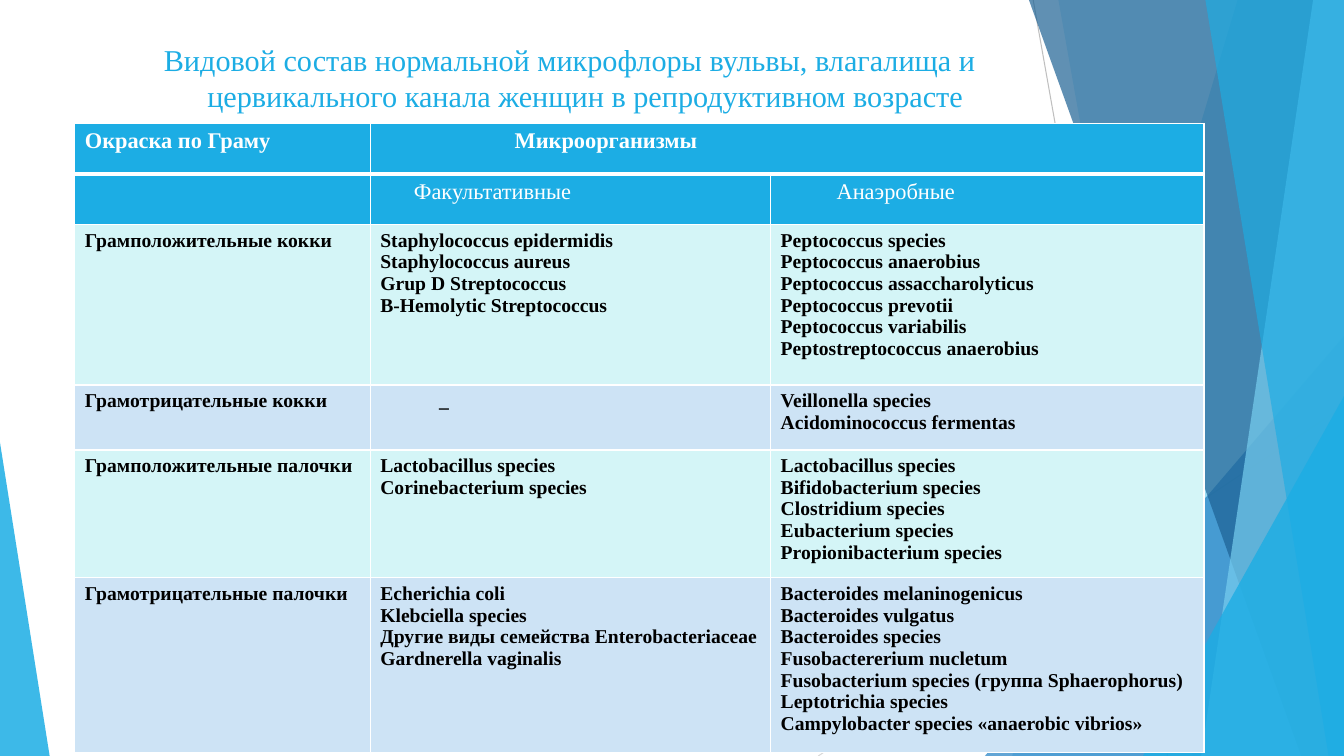
from lxml.etree import SubElement
from pptx import Presentation
from pptx.dml.color import RGBColor
from pptx.enum.shapes import MSO_CONNECTOR as Connector, MSO_SHAPE as Shape
from pptx.enum.text import MSO_ANCHOR as Anchor, PP_ALIGN as Align
from pptx.oxml import parse_xml
from pptx.oxml.ns import nsdecls, qn
from pptx.util import Pt

FONT = "Times New Roman"
COLORS = {
    "sky": "1CADE4", "blue": "2683C6", "navy": "1D6294", "pale": "77CEEF",
    "white": "FFFFFF", "black": "000000", "mint": "D4F5F7", "ice": "CDE3F5",
    "gray": "BFBFBF", "light_gray": "D9D9D9",
}
SLIDE_W, SLIDE_H = 960, 540

# Decoration, measured from the slide's top left corner
RAYS = [
    ((738, 0), (834, 540), "gray"),
    ((960, 290), (584.5, 540), "light_gray"),
]
# Facets reach the right edge: top x, bottom x, colour, opacity
BACK_FACETS = [(884, 723, "sky", 30), (756, 852, "sky", 20)]
FRONT_FACETS = [(735, 929.5, "navy", 70), (938, 858, "pale", 70), (861, 949, "sky", 65)]
# Corners stand on the bottom edge: left, top, width, apex, colour, opacity
BACK_CORNERS = [(703.5, 240, 256.5, 1, "blue", 72)]
FRONT_CORNERS = [(816.5, 283, 143.5, 1, "sky", 80), (0, 316, 35.5, 0, "sky", 85)]

TITLE = ["Видовой состав нормальной микрофлоры вульвы, влагалища и",
         "цервикального канала женщин в репродуктивном возрасте"]

COLUMN_WIDTHS = [211, 286, 309.5]
ROW_HEIGHTS = [36, 36, 114.5, 46.5, 85, 115.5]
SPECIES = [
    ("Грамположительные кокки",
     ["Staphylococcus epidermidis", "Staphylococcus aureus", "Grup D Streptococcus",
      "B-Hemolytic Streptococcus"],
     ["Peptococcus species", "Peptococcus anaerobius", "Peptococcus assaccharolyticus",
      "Peptococcus prevotii", "Peptococcus variabilis", "Peptostreptococcus anaerobius"]),
    ("Грамотрицательные кокки",
     ["_"],
     ["Veillonella species", "Acidominococcus fermentas"]),
    ("Грамположительные палочки",
     ["Lactobacillus species", "Corinebacterium species"],
     ["Lactobacillus species", "Bifidobacterium species", "Clostridium species",
      "Eubacterium species", "Propionibacterium species"]),
    ("Грамотрицательные палочки",
     ["Echerichia coli", "Klebciella species", "Другие виды семейства Enterobacteriaceae",
      "Gardnerella vaginalis"],
     ["Bacteroides melaninogenicus", "Bacteroides vulgatus", "Bacteroides species",
      "Fusobactererium nucletum", "Fusobacterium species (группа Sphaerophorus)",
      "Leptotrichia species", "Campylobacter species «anaerobic vibrios»"]),
]


def rgb(color):
    return RGBColor.from_string(COLORS[color])


def tint(shape, color, opacity):
    shape.shadow.inherit = False
    shape.line.fill.background()
    shape.fill.solid()
    shape.fill.fore_color.rgb = rgb(color)
    color_node = shape.fill._xPr.find(qn("a:solidFill"))[0]
    SubElement(color_node, qn("a:alpha"), val=str(opacity * 1000))


def indent(paragraph, margin, first_line=0):
    properties = paragraph._p.get_or_add_pPr()
    properties.set("marL", str(Pt(margin)))
    properties.set("indent", str(Pt(first_line)))


def add_run(paragraph, text, size, color, bold=False):
    run = paragraph.add_run()
    run.text = text
    run.font.name, run.font.size, run.font.bold = FONT, Pt(size), bold
    run.font.color.rgb = rgb(color)


def draw_rays(slide, left, top):
    for (x1, y1), (x2, y2), color in RAYS:
        ray = slide.shapes.add_connector(
            Connector.STRAIGHT, Pt(left + x1), Pt(top + y1), Pt(left + x2), Pt(top + y2))
        ray.line.color.rgb = rgb(color)
        ray.line.width = Pt(0.75)
        SubElement(ray._element.spPr, qn("a:effectLst"))


def draw_facets(slide, facets, left, top, width, height):
    right, bottom = left + width, top + height
    for top_x, bottom_x, color, opacity in facets:
        builder = slide.shapes.build_freeform(Pt(left + top_x), Pt(top))
        corners = [(right, top), (right, bottom), (left + bottom_x, bottom)]
        builder.add_line_segments([(Pt(x), Pt(y)) for x, y in corners], close=True)
        tint(builder.convert_to_shape(), color, opacity)


def draw_corners(slide, corners, left, top, height):
    for x, y, width, apex, color, opacity in corners:
        corner = slide.shapes.add_shape(
            Shape.ISOSCELES_TRIANGLE, Pt(left + x), Pt(top + y), Pt(width), Pt(height - y))
        corner.adjustments[0] = apex
        tint(corner, color, opacity)


def draw_decoration(slide, left, top, width, height):
    draw_rays(slide, left, top)
    draw_facets(slide, BACK_FACETS, left, top, width, height)
    draw_corners(slide, BACK_CORNERS, left, top, height)
    draw_facets(slide, FRONT_FACETS, left, top, width, height)
    draw_corners(slide, FRONT_CORNERS, left, top, height)


def draw_title(slide, left, top, width, height):
    frame = slide.shapes.add_textbox(Pt(left), Pt(top), Pt(width), Pt(height)).text_frame
    frame.word_wrap = True
    frame.vertical_anchor = Anchor.TOP
    heading = frame.paragraphs[0]
    heading.alignment = Align.LEFT
    indent(heading, 84, -31)
    add_run(heading, TITLE[0], 21.6, "sky")
    heading.add_line_break()
    add_run(heading, TITLE[1], 21.6, "sky")


def style_cell(cell, fill, top=1, bottom=1):
    cell.fill.solid()
    cell.fill.fore_color.rgb = rgb(fill)
    borders = [("lnL", 1), ("lnR", 1), ("lnT", top), ("lnB", bottom)]
    for position, (side, weight) in enumerate(borders):
        cell._tc.get_or_add_tcPr().insert(position, parse_xml(
            f'<a:{side} {nsdecls("a")} w="{Pt(weight)}"><a:solidFill>'
            f'<a:srgbClr val="{COLORS["white"]}"/></a:solidFill></a:{side}>'))


def write_cell(cell, lines, size, color, bold, margin=0):
    frame = cell.text_frame
    for number, line in enumerate(lines):
        paragraph = frame.add_paragraph() if number else frame.paragraphs[0]
        indent(paragraph, margin)
        add_run(paragraph, line, size, color, bold)


def draw_species_table(slide, left, top):
    table = slide.shapes.add_table(
        len(ROW_HEIGHTS), len(COLUMN_WIDTHS), Pt(left), Pt(top),
        Pt(sum(COLUMN_WIDTHS)), Pt(sum(ROW_HEIGHTS))).table
    for column, width in zip(table.columns, COLUMN_WIDTHS):
        column.width = Pt(width)
    for row, height in zip(table.rows, ROW_HEIGHTS):
        row.height = Pt(height)

    # Two header rows
    for column in range(len(COLUMN_WIDTHS)):
        style_cell(table.cell(0, column), "sky", bottom=3)
        style_cell(table.cell(1, column), "sky", top=3)
    table.cell(0, 1).merge(table.cell(0, 2))
    write_cell(table.cell(0, 0), ["Окраска по Граму"], 16, "white", True)
    write_cell(table.cell(0, 1), ["Микроорганизмы"], 16, "white", True, 96)
    write_cell(table.cell(1, 1), ["Факультативные"], 16, "white", False, 24)
    write_cell(table.cell(1, 2), ["Анаэробные"], 16, "white", False, 40)

    # One row per Gram group
    for row, (group, facultative, anaerobic) in enumerate(SPECIES, start=2):
        for column, names in enumerate([[group], facultative, anaerobic]):
            cell = table.cell(row, column)
            style_cell(cell, "ice" if row % 2 else "mint")
            write_cell(cell, names, 14, "black", True, 42 if names == ["_"] else 0)


def main():
    presentation = Presentation()
    presentation.slide_width, presentation.slide_height = Pt(SLIDE_W), Pt(SLIDE_H)
    slide = presentation.slides.add_slide(presentation.slide_layouts[6])
    draw_decoration(slide, 0, 0, SLIDE_W, SLIDE_H)
    draw_title(slide, 57, 26, 728, 53)
    draw_species_table(slide, 53.5, 88.5)
    presentation.save("out.pptx")


if __name__ == "__main__":
    main()
